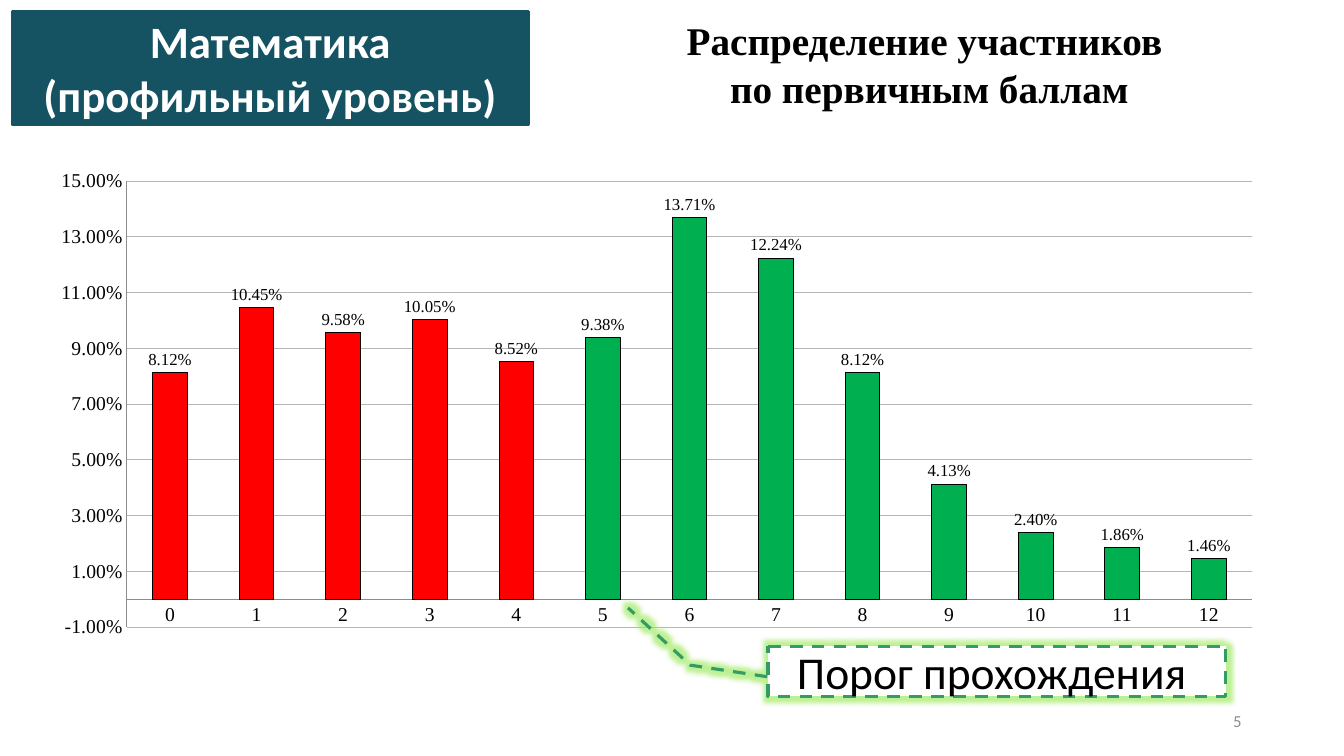
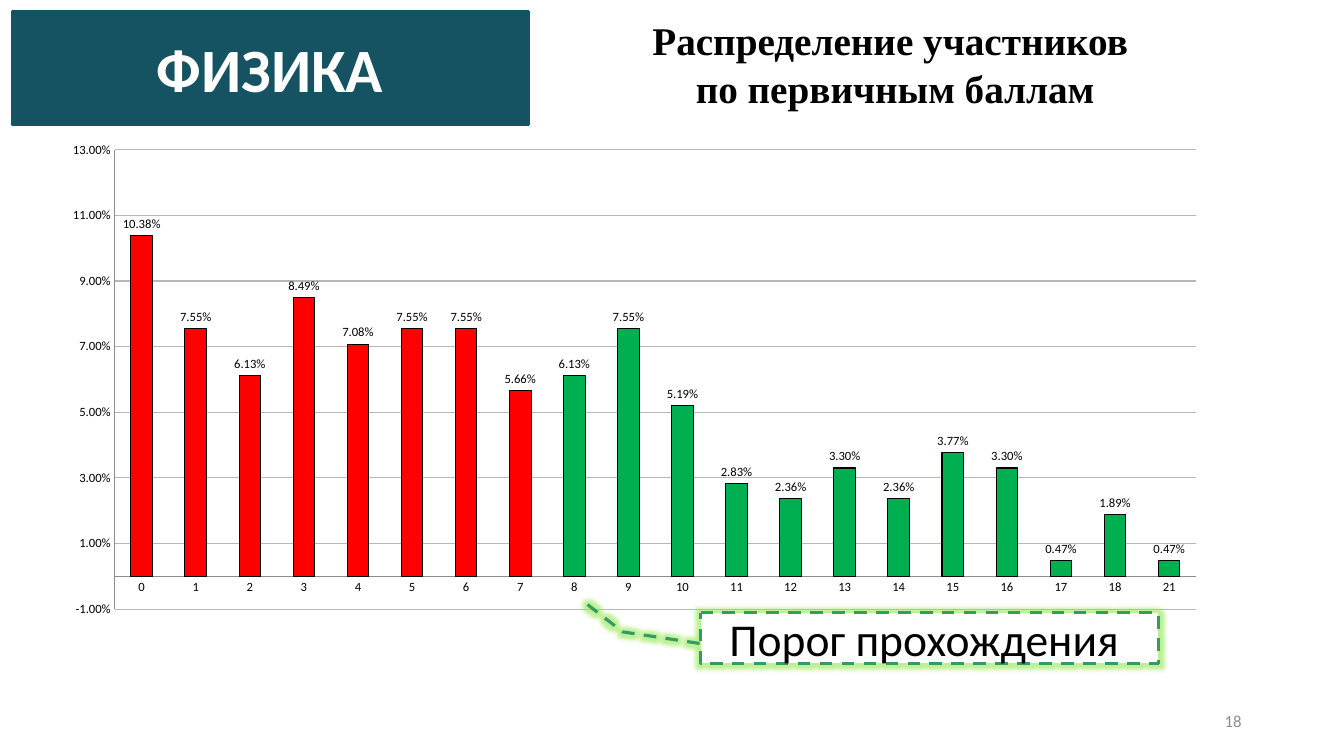
from dataclasses import dataclass
from typing import NamedTuple

from lxml import etree
from pptx import Presentation
from pptx.chart.data import CategoryChartData
from pptx.dml.color import RGBColor
from pptx.enum.chart import XL_CHART_TYPE, XL_LABEL_POSITION, XL_TICK_MARK
from pptx.enum.dml import MSO_LINE
from pptx.enum.shapes import MSO_SHAPE
from pptx.enum.text import MSO_ANCHOR, PP_ALIGN
from pptx.oxml.ns import qn
from pptx.util import Pt

COLUMNS = XL_CHART_TYPE.COLUMN_CLUSTERED
OUTSIDE_END = XL_LABEL_POSITION.OUTSIDE_END
NO_TICKS = XL_TICK_MARK.NONE
DASH = MSO_LINE.DASH
RECTANGLE = MSO_SHAPE.RECTANGLE
CALLOUT = MSO_SHAPE.LINE_CALLOUT_2
TOP, MIDDLE = MSO_ANCHOR.TOP, MSO_ANCHOR.MIDDLE
CENTER, RIGHT = PP_ALIGN.CENTER, PP_ALIGN.RIGHT

TEAL = RGBColor(0x15, 0x52, 0x62)
WHITE = RGBColor(0xFF, 0xFF, 0xFF)
BLACK = RGBColor(0, 0, 0)
RED = RGBColor(0xFF, 0, 0)
GREEN = RGBColor(0, 0xB0, 0x50)
CALLOUT_GREEN = RGBColor(0x33, 0x9C, 0x66)
GLOW_GREEN = RGBColor(0x92, 0xE6, 0x4B)
GRID_GRAY = RGBColor(0xB7, 0xB7, 0xB7)
AXIS_GRAY = RGBColor(0x8C, 0x8C, 0x8C)

SANS = "Calibri"
SERIF = "Times New Roman"
PERCENT = "0.00%"
TITLE_LINES = ["Распределение участников ", "по первичным баллам"]
CALLOUT_TEXT = "Порог прохождения "


class Box(NamedTuple):
    left: float
    top: float
    width: float
    height: float

    def points(self) -> list:
        return [Pt(length) for length in self]


class TextStyle(NamedTuple):
    size: float
    color: RGBColor
    font: str = SANS
    bold: bool = False
    align: int = CENTER
    line_spacing: float | None = None


BANNER_BOX = Box(8.64, 7.92, 368.64, 80.64)
NUMBER_BOX = Box(678, 500.4, 216, 28.8)
TITLE_STYLE = TextStyle(28, BLACK, SERIF, True, line_spacing=34)
CALLOUT_STYLE = TextStyle(32.5, BLACK)
NUMBER_STYLE = TextStyle(12, AXIS_GRAY, align=RIGHT)


@dataclass
class ScoreSlide:
    subject: str
    subject_size: float
    number: int
    title_box: Box
    chart_box: Box
    plot_layout: Box
    chart_font: str
    axis_size: float
    label_size: float
    maximum: float
    threshold: int
    scores: list[int]
    shares: list[float]
    callout_box: Box
    callout_tip: tuple[float, float]


SCORE_SLIDES = [
    ScoreSlide(
        subject="Математика (профильный уровень)", subject_size=32, number=5,
        title_box=Box(398.88, 7.92, 529.92, 74.88),
        chart_box=Box(25.92, 115.2, 886.32, 347.04),
        plot_layout=Box(0.073, 0.041, 0.907, 0.918),
        chart_font=SERIF, axis_size=14, label_size=12,
        maximum=0.15, threshold=5, scores=list(range(13)),
        shares=[0.0812, 0.1045, 0.0958, 0.1005, 0.0852, 0.0938, 0.1371,
                0.1224, 0.0812, 0.0413, 0.024, 0.0186, 0.0146],
        callout_box=Box(548.64, 461.52, 326.88, 36),
        callout_tip=(-0.758, -0.306),
    ),
    ScoreSlide(
        subject="ФИЗИКА", subject_size=44, number=18,
        title_box=Box(411.12, 7.92, 456.48, 74.88),
        chart_box=Box(36, 95.04, 835.2, 352.8),
        plot_layout=Box(0.055, 0.034, 0.925, 0.93),
        chart_font=SANS, axis_size=9, label_size=9,
        maximum=0.13, threshold=8, scores=[*range(19), 21],
        shares=[0.1038, 0.0755, 0.0613, 0.0849, 0.0708, 0.0755, 0.0755,
                0.0566, 0.0613, 0.0755, 0.0519, 0.0283, 0.0236, 0.033,
                0.0236, 0.0377, 0.033, 0.0047, 0.0189, 0.0047],
        callout_box=Box(500.4, 437.76, 326.88, 36),
        callout_tip=(-0.256, -0.26),
    ),
]


def write_text(shape, lines: list[str], style: TextStyle, anchor=MIDDLE) -> None:
    frame = shape.text_frame
    frame.word_wrap = True
    frame.vertical_anchor = anchor
    frame.text = "\n".join(lines)
    for paragraph in frame.paragraphs:
        paragraph.alignment = style.align
        if style.line_spacing:
            paragraph.line_spacing = Pt(style.line_spacing)
        set_font(paragraph.font, style.size, style.font, style.color)
        paragraph.font.bold = style.bold


def set_font(font, size: float, name: str, color: RGBColor = BLACK) -> None:
    font.size = Pt(size)
    font.name = name
    font.color.rgb = color


def add_text(slide, box: Box, lines: list[str], style: TextStyle, anchor=MIDDLE) -> None:
    write_text(slide.shapes.add_textbox(*box.points()), lines, style, anchor)


def add_outlined(slide, kind, box: Box, fill: RGBColor, line: RGBColor):
    shape = slide.shapes.add_shape(kind, *box.points())
    shape.shadow.inherit = False
    shape.fill.solid()
    shape.fill.fore_color.rgb = fill
    shape.line.color.rgb = line
    shape.line.width = Pt(2.25)
    return shape


def add_glow(shape) -> None:
    effects = shape._element.spPr.find(qn("a:effectLst"))
    glow = etree.SubElement(effects, qn("a:glow"), rad=str(Pt(6)))
    color = etree.SubElement(glow, qn("a:srgbClr"), val=str(GLOW_GREEN))
    etree.SubElement(color, qn("a:alpha"), val="60000")


def add_callout(slide, box: Box, tip: tuple[float, float]) -> None:
    callout = add_outlined(slide, CALLOUT, box, WHITE, CALLOUT_GREEN)
    callout.line.dash_style = DASH
    for index, value in enumerate((0.608, -0.002, 0.379, -0.17, *tip)):
        callout.adjustments[index] = value
    add_glow(callout)
    write_text(callout, [CALLOUT_TEXT], CALLOUT_STYLE)


def set_plot_layout(chart, layout: Box) -> None:
    plot_area = chart._chartSpace.chart.plotArea
    for existing in plot_area.findall(qn("c:layout")):
        plot_area.remove(existing)
    element = etree.Element(qn("c:layout"))
    plot_area.insert(0, element)
    manual = etree.SubElement(element, qn("c:manualLayout"))
    settings = {"layoutTarget": "inner", "xMode": "edge", "yMode": "edge"}
    settings |= dict(zip("xywh", map(str, layout)))
    for name, value in settings.items():
        etree.SubElement(manual, qn(f"c:{name}"), val=value)


def add_score_chart(slide, content: ScoreSlide) -> None:
    data = CategoryChartData(number_format=PERCENT)
    data.categories = [str(score) for score in content.scores]
    data.add_series("Series 1", content.shares)
    chart = slide.shapes.add_chart(COLUMNS, *content.chart_box.points(), data).chart
    chart.has_title = False
    chart.has_legend = False
    set_font(chart.font, content.axis_size, content.chart_font)
    set_plot_layout(chart, content.plot_layout)

    for axis in (chart.category_axis, chart.value_axis):
        axis.major_tick_mark = axis.minor_tick_mark = NO_TICKS
        axis.format.line.color.rgb = AXIS_GRAY
        axis.format.line.width = Pt(0.75)
        set_font(axis.tick_labels.font, content.axis_size, content.chart_font)
    value_axis = chart.value_axis
    value_axis.minimum_scale = -0.01
    value_axis.maximum_scale = content.maximum
    value_axis.major_unit = 0.02
    value_axis.tick_labels.number_format = PERCENT
    value_axis.tick_labels.number_format_is_linked = False
    value_axis.major_gridlines.format.line.color.rgb = GRID_GRAY
    value_axis.major_gridlines.format.line.width = Pt(0.75)

    plot = chart.plots[0]
    plot.gap_width = 150
    plot.vary_by_categories = False
    plot.has_data_labels = True
    labels = plot.data_labels
    labels.show_value = True
    labels.position = OUTSIDE_END
    labels.number_format = PERCENT
    labels.number_format_is_linked = False
    set_font(labels.font, content.label_size, content.chart_font)
    series = plot.series[0]
    series.invert_if_negative = False
    for index, score in enumerate(content.scores):
        column = series.points[index].format
        column.fill.solid()
        column.fill.fore_color.rgb = RED if score < content.threshold else GREEN
        column.line.color.rgb = BLACK
        column.line.width = Pt(0.75)


def add_score_slide(presentation, content: ScoreSlide) -> None:
    slide = presentation.slides.add_slide(presentation.slide_layouts[6])
    add_text(slide, content.title_box, TITLE_LINES, TITLE_STYLE, TOP)
    add_text(slide, NUMBER_BOX, [str(content.number)], NUMBER_STYLE)
    add_score_chart(slide, content)
    banner = add_outlined(slide, RECTANGLE, BANNER_BOX, TEAL, TEAL)
    write_text(banner, [content.subject], TextStyle(content.subject_size, WHITE, bold=True))
    add_callout(slide, content.callout_box, content.callout_tip)


def main() -> None:
    presentation = Presentation()
    presentation.slide_width = Pt(960)
    presentation.slide_height = Pt(540)
    for content in SCORE_SLIDES:
        add_score_slide(presentation, content)
    presentation.save("out.pptx")


if __name__ == "__main__":
    main()
